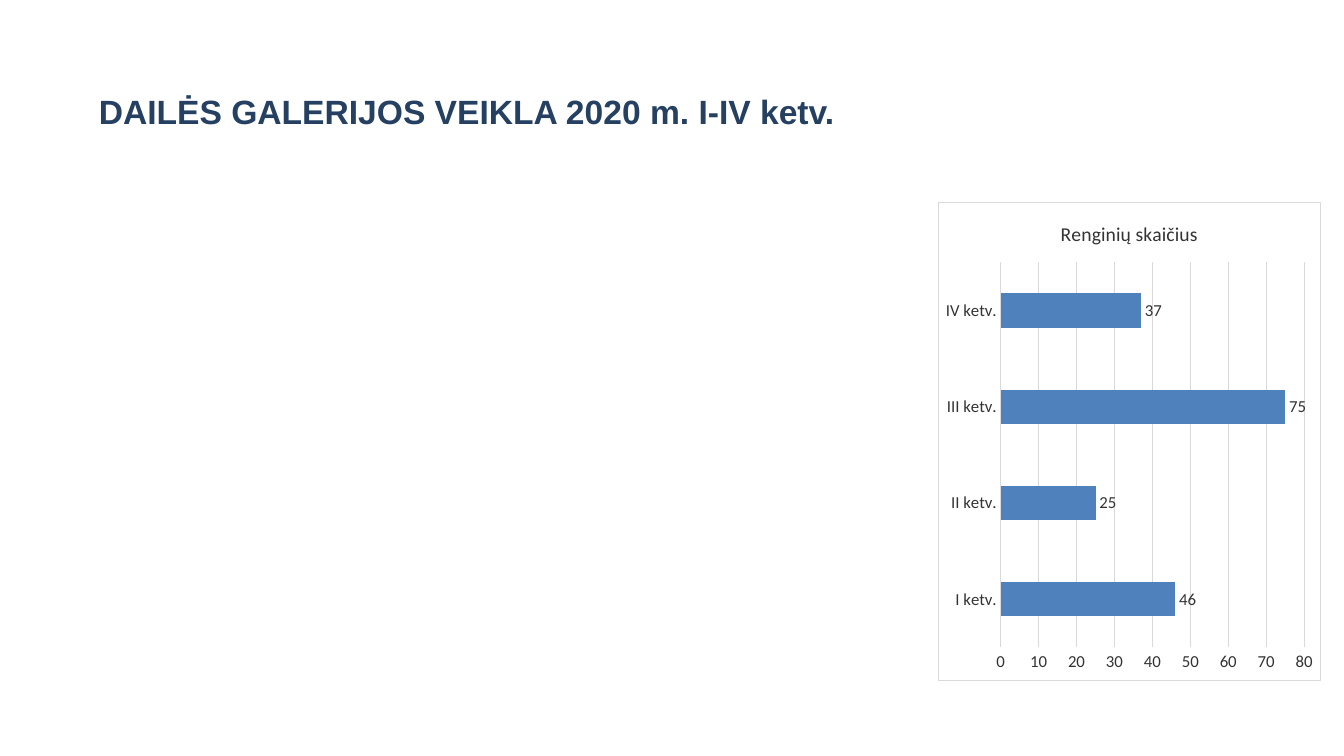
import pptx
import pptx.chart.data
import pptx.dml.color
import pptx.enum.chart
import pptx.enum.text
import pptx.oxml
import pptx.oxml.ns
import pptx.util
from pptx.util import Inches

NAVY = pptx.dml.color.RGBColor(0x25, 0x40, 0x61)
BLUE = pptx.dml.color.RGBColor(0x4F, 0x81, 0xBD)
DARK_GREY = pptx.dml.color.RGBColor(0x33, 0x33, 0x33)
PALE_GREY = pptx.dml.color.RGBColor(0xD9, 0xD9, 0xD9)
WHITE = pptx.dml.color.RGBColor(0xFF, 0xFF, 0xFF)

EVENTS_TITLE = "Renginių skaičius"
EVENTS_BY_QUARTER = {"I ketv.": 46, "II ketv.": 25, "III ketv.": 75, "IV ketv.": 37}


def style_font(font, name, size, color, bold=False):
    """Set the typeface, size, colour and weight of a font."""
    font.name = name
    font.size = pptx.util.Pt(size)
    font.color.rgb = color
    font.bold = bold


def style_line(line, color):
    """Make a line thin and solid."""
    line.color.rgb = color
    line.width = pptx.util.Pt(0.75)


def set_heading(slide, text):
    """Fill and place the slide title."""
    heading = slide.shapes.title
    heading.left, heading.top = Inches(0.88), Inches(0.4)
    heading.width, heading.height = Inches(11.5), Inches(1.45)
    heading.text_frame.vertical_anchor = pptx.enum.text.MSO_ANCHOR.MIDDLE
    paragraph = heading.text_frame.paragraphs[0]
    paragraph.alignment = pptx.enum.text.PP_ALIGN.LEFT
    paragraph.line_spacing = 0.9
    run = paragraph.add_run()
    run.text = text
    style_font(run.font, "Arial", 24, NAVY, bold=True)


def frame_chart(chart, fill, border):
    """Give the chart area a fill and a thin border."""
    frame = pptx.oxml.parse_xml(
        f'<c:spPr {pptx.oxml.ns.nsdecls("c", "a")}>'
        f'<a:solidFill><a:srgbClr val="{fill}"/></a:solidFill>'
        f'<a:ln w="{pptx.util.Pt(0.75)}"><a:solidFill><a:srgbClr val="{border}"/>'
        '</a:solidFill></a:ln></c:spPr>'
    )
    chart.element.find(pptx.oxml.ns.qn("c:chart")).addnext(frame)


def style_axis(axis):
    """Remove tick marks and format the labels of an axis."""
    axis.major_tick_mark = pptx.enum.chart.XL_TICK_MARK.NONE
    axis.minor_tick_mark = pptx.enum.chart.XL_TICK_MARK.NONE
    style_font(axis.tick_labels.font, "Calibri", 12, DARK_GREY)


def add_events_chart(slide, title, events):
    """Add the bar chart of events per quarter."""
    data = pptx.chart.data.CategoryChartData()
    data.categories = list(events)
    data.add_series(title, list(events.values()))
    chart = slide.shapes.add_chart(
        pptx.enum.chart.XL_CHART_TYPE.BAR_CLUSTERED,
        Inches(9.3), Inches(2), Inches(3.8), Inches(4.76), data,
    ).chart
    style_font(chart.font, "Calibri", 12, DARK_GREY)
    frame_chart(chart, WHITE, PALE_GREY)
    chart.has_legend = False
    chart.has_title = True
    title_run = chart.chart_title.text_frame.paragraphs[0].add_run()
    title_run.text = title
    style_font(title_run.font, "Calibri", 14, DARK_GREY)
    chart.chart_title.include_in_layout = False

    style_axis(chart.category_axis)
    style_line(chart.category_axis.format.line, PALE_GREY)
    style_axis(chart.value_axis)
    chart.value_axis.format.line.fill.background()
    chart.value_axis.minimum_scale = 0
    chart.value_axis.maximum_scale = 80
    chart.value_axis.major_unit = 10
    style_line(chart.value_axis.major_gridlines.format.line, PALE_GREY)

    bars = chart.plots[0]
    bars.gap_width = 182
    bars.vary_by_categories = False
    series = bars.series[0]
    series.format.fill.solid()
    series.format.fill.fore_color.rgb = BLUE
    labels = series.data_labels
    labels.show_value = True
    labels.position = pptx.enum.chart.XL_LABEL_POSITION.OUTSIDE_END
    style_font(labels.font, "Calibri", 12, DARK_GREY)


def main():
    """Build and save the gallery activity slide."""
    deck = pptx.Presentation()
    deck.slide_width, deck.slide_height = Inches(13.33), Inches(7.5)
    slide = deck.slides.add_slide(deck.slide_layouts.get_by_name("Title Only"))
    set_heading(slide, "DAILĖS GALERIJOS VEIKLA 2020 m. I-IV ketv.")
    add_events_chart(slide, EVENTS_TITLE, EVENTS_BY_QUARTER)
    deck.save("out.pptx")


if __name__ == "__main__":
    main()
